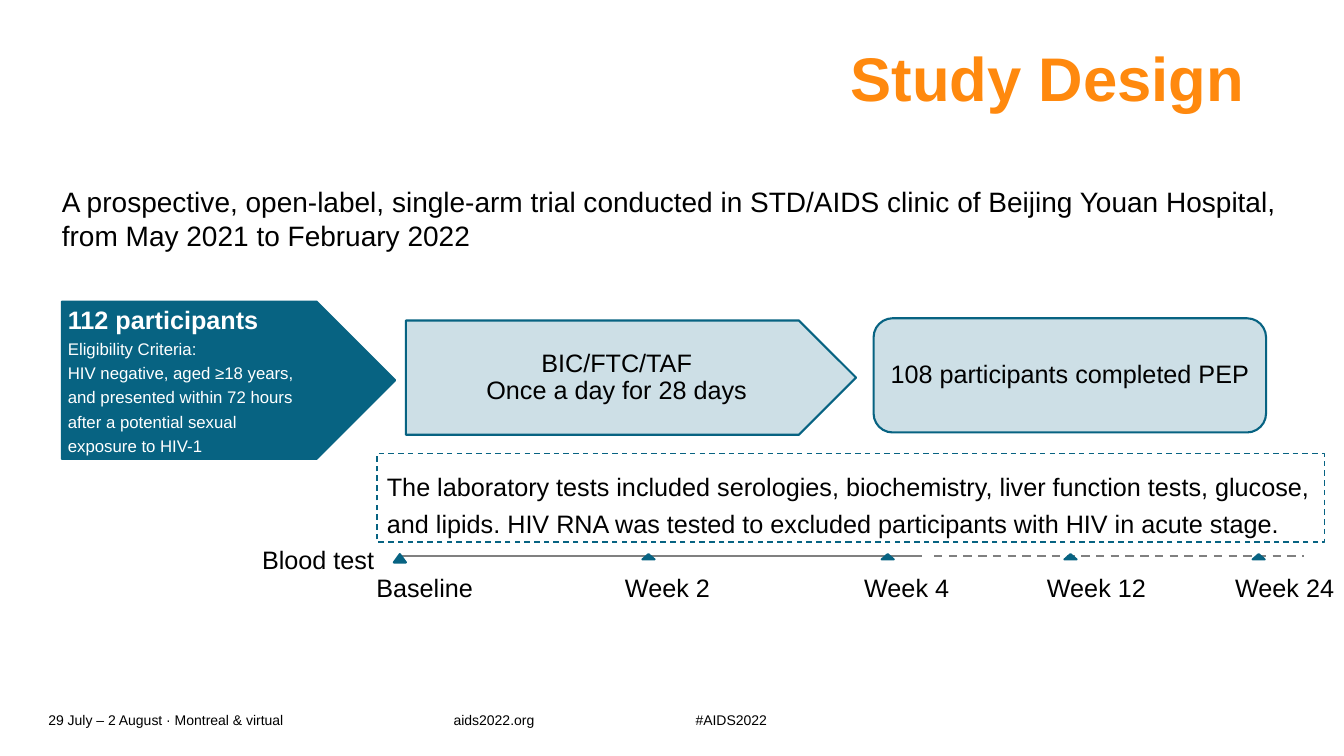
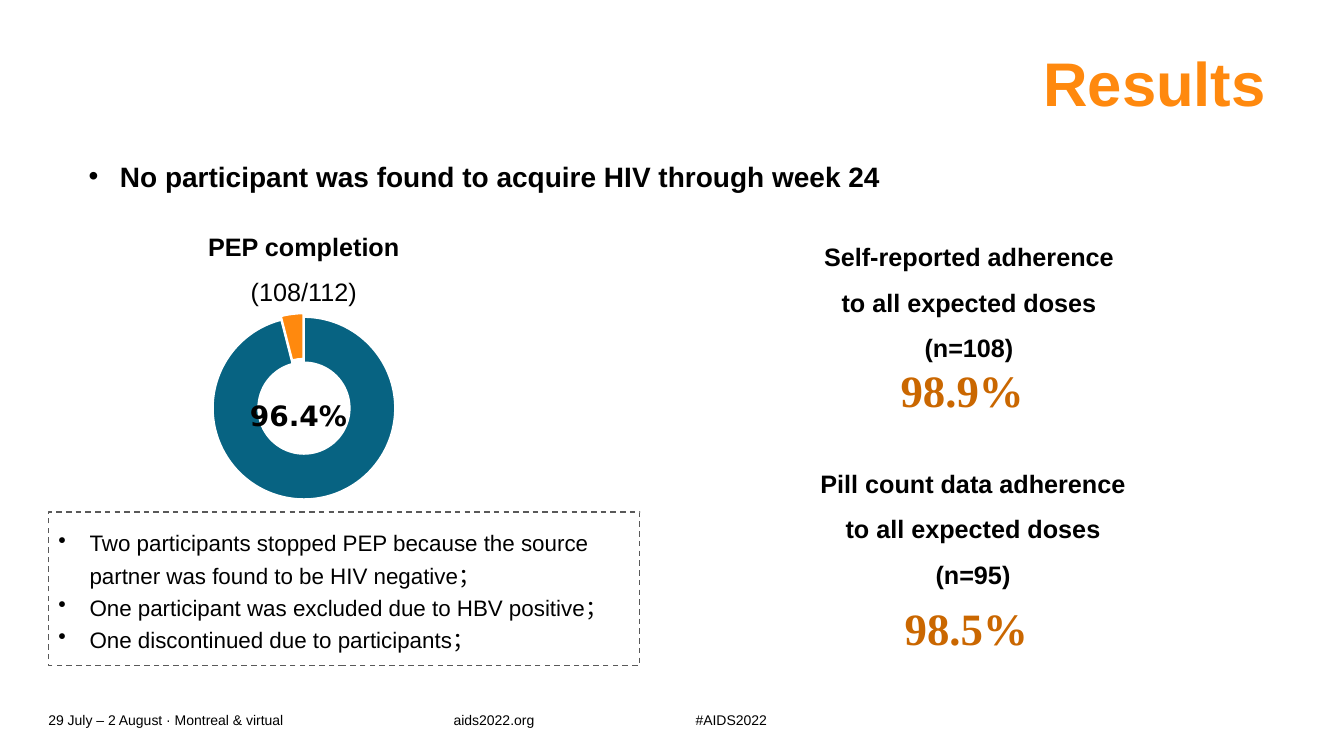
from dataclasses import dataclass, replace

from lxml.etree import SubElement
from pptx import Presentation
from pptx.chart.data import CategoryChartData
from pptx.dml.color import RGBColor
from pptx.enum.chart import XL_CHART_TYPE
from pptx.enum.dml import MSO_LINE
from pptx.enum.shapes import MSO_CONNECTOR, MSO_SHAPE
from pptx.enum.text import MSO_ANCHOR, MSO_AUTO_SIZE, PP_ALIGN
from pptx.oxml.ns import qn
from pptx.util import Inches, Pt

WIDE, HIGH = Inches(13.333), Inches(7.5)


@dataclass(frozen=True)
class Theme:
    teal: str = "076382"
    orange: str = "FF890E"
    amber: str = "CA6700"
    black: str = "000000"
    white: str = "FFFFFF"
    gray: str = "808080"
    dark: str = "595959"
    sans: str = "Arial"
    serif: str = "Times New Roman"
    plain: str = "DejaVu Sans"
    title: int = 44
    figure: int = 32
    lead: int = 20
    body: int = 18
    note: int = 16
    small: int = 12
    foot: int = 10


T = Theme()


@dataclass(frozen=True)
class Look:
    size: int = T.body
    color: str = T.black
    bold: bool = False
    font: str = T.sans
    align: PP_ALIGN = PP_ALIGN.LEFT
    lead: float = 1.0
    bullet: bool = False


TITLE = Look(T.title, T.orange, True, align=PP_ALIGN.RIGHT, lead=0.9)
LABEL = Look(lead=0.9)
STEP = replace(LABEL, align=PP_ALIGN.CENTER)
HEAD = Look(bold=True, align=PP_ALIGN.CENTER, lead=1.5)
RATE = Look(T.figure, T.amber, True, T.serif, PP_ALIGN.CENTER)
FOOT = Look(T.foot)
INSET = (0.1, 0.05, 0.1, 0.05)
FLUSH = (0, 0, 0, 0)


def area(x, y, w, h):
    """Turn percentages of the slide into a place and size."""
    return [int(whole * part / 100)
            for whole, part in zip((WIDE, HIGH) * 2, (x, y, w, h))]


def rgb(color):
    return RGBColor.from_string(color)


def mark(para, bullet):
    props = para._p.get_or_add_pPr()
    indent = Inches(0.31) if bullet else 0
    props.set("marL", str(indent))
    props.set("indent", str(-indent))
    if bullet:
        SubElement(props, qn("a:buChar")).set("char", "•")
    else:
        SubElement(props, qn("a:buNone"))


def write(frame, text, *looks, inset=INSET, anchor=MSO_ANCHOR.TOP, wrap=True):
    """Fill a frame, one look a line; the last look serves all later lines."""
    frame.text = text
    frame.word_wrap = wrap
    frame.auto_size = MSO_AUTO_SIZE.NONE
    frame.vertical_anchor = anchor
    (frame.margin_left, frame.margin_top,
     frame.margin_right, frame.margin_bottom) = map(Inches, inset)
    for spot, para in enumerate(frame.paragraphs):
        look = looks[min(spot, len(looks) - 1)]
        mark(para, look.bullet)
        para.alignment = look.align
        para.line_spacing = look.lead
        para.space_before = Pt(0)
        for run in para.runs:
            font = run.font
            font.name, font.size, font.bold = look.font, Pt(look.size), look.bold
            font.color.rgb = rgb(look.color)


def label(slide, place, text, *looks, **opts):
    write(slide.shapes.add_textbox(*area(*place)).text_frame, text, *looks, **opts)


def hold(holder, place, text, look, inset=INSET):
    """Move a placeholder and fill it."""
    holder.left, holder.top, holder.width, holder.height = area(*place)
    write(holder.text_frame, text, look, inset=inset)


def block(slide, kind, place, fill=None, edge=T.teal, width=1.5, dash=False, alpha=None):
    shape = slide.shapes.add_shape(kind, *area(*place))
    shape.shadow.inherit = False
    if fill:
        shape.fill.solid()
        shape.fill.fore_color.rgb = rgb(fill)
    else:
        shape.fill.background()
    if alpha:
        tint = shape._element.spPr.find(".//" + qn("a:srgbClr"))
        SubElement(tint, qn("a:alpha")).set("val", str(alpha * 1000))
    shape.line.color.rgb = rgb(edge)
    shape.line.width = Pt(width)
    if dash:
        shape.line.dash_style = MSO_LINE.DASH
    return shape.text_frame


def rule(slide, start, end, y, dash=False):
    x, top, span, _ = area(start, y, end - start, 0)
    line = slide.shapes.add_connector(MSO_CONNECTOR.STRAIGHT, x, top, x + span, top)
    line.line.color.rgb = rgb(T.gray)
    line.line.width = Pt(1.5)
    if dash:
        line.line.dash_style = MSO_LINE.DASH
    SubElement(line._element.spPr, qn("a:effectLst"))


def ring(slide, place, values, colors):
    data = CategoryChartData()
    data.categories = [str(n + 1) for n in range(len(values))]
    data.add_series("Series 1", values)
    chart = slide.shapes.add_chart(XL_CHART_TYPE.DOUGHNUT, *area(*place), data).chart
    chart.has_legend = chart.has_title = False
    chart.font.name, chart.font.size = T.plain, Pt(T.foot)
    chart.font.color.rgb = rgb(T.black)
    plot = chart.plots[0]
    plot.vary_by_categories = False
    series = plot.series[0]
    for spot, color in enumerate(colors):
        style = series.points[spot].format
        style.fill.solid()
        style.fill.fore_color.rgb = rgb(color)
        style.line.color.rgb = rgb(T.white)
        style.line.width = Pt(1.5)
    burst = SubElement(series._element, qn("c:explosion"))
    burst.set("val", "4")
    series._element.find(qn("c:dPt")).addprevious(burst)
    plot._element.find(qn("c:holeSize")).set("val", "75")


def page(deck, title, x, y):
    """Add a slide with its title and footer; return it with its body."""
    slide = deck.slides.add_slide(deck.slide_layouts[1])
    hold(slide.shapes.title, (x, y, 62.6, 17.9), title, TITLE, FLUSH)
    for left, width, text in ((3.6, 30.1, "29 July – 2 August · Montreal & virtual"),
                              (33.75, 14.5, "aids2022.org"),
                              (51.75, 14.5, "#AIDS2022")):
        label(slide, (left, 93.6, width, 3.2), text, FOOT,
              inset=FLUSH, anchor=MSO_ANCHOR.MIDDLE)
    return slide, slide.placeholders[1]


def visits(slide):
    rule(slide, 29.7, 68.6, 73.5)
    rule(slide, 69.5, 97, 73.5, dash=True)
    label(slide, (19.5, 72.4, 8.7, 3.6), "Blood test", LABEL, inset=FLUSH, wrap=False)
    for x, text in ((29.3, "Baseline"), (47.8, "Week 2"), (65.6, "Week 4"),
                    (79.2, "Week 12"), (93.2, "Week 24")):
        tall = 1.1 if text == "Baseline" else 0.7
        block(slide, MSO_SHAPE.ISOSCELES_TRIANGLE, (x, 73.3, 0.9, tall), T.teal)
        label(slide, (x - 1.3, 76.1, 8.1, 3.6), text, LABEL, inset=FLUSH, wrap=False)


def design(deck):
    slide, body = page(deck, "Study Design", 30, 6.4)
    hold(body, (4.6, 24.4, 90.6, 8.7),
         "A prospective, open-label, single-arm trial conducted in STD/AIDS clinic "
         "of Beijing Youan Hospital, from May 2021 to February 2022",
         Look(T.lead), FLUSH)

    entry = block(slide, MSO_SHAPE.PENTAGON, (4.6, 39.9, 24.8, 20.8), T.teal)
    write(entry, "112 participants\nEligibility Criteria:\n"
          "HIV negative, aged ≥18 years, and presented within 72 hours "
          "after a potential sexual exposure to HIV-1",
          Look(color=T.white, bold=True), Look(T.small, T.white, lead=1.2),
          inset=(0.06, 0.03, 0.47, 0))
    for kind, place, text in (
            (MSO_SHAPE.PENTAGON, (30.2, 42.4, 33.5, 15.1),
             "BIC/FTC/TAF\nOnce a day for 28 days"),
            (MSO_SHAPE.ROUNDED_RECTANGLE, (65, 42.1, 29.2, 15.1),
             "108 participants completed PEP")):
        write(block(slide, kind, place, T.teal, alpha=20), text, STEP,
              anchor=MSO_ANCHOR.MIDDLE)

    tests = block(slide, MSO_SHAPE.RECTANGLE, (28.05, 60, 70.5, 11.7), width=1, dash=True)
    write(tests, "The laboratory tests included serologies, biochemistry, liver function "
          "tests, glucose, and lipids. HIV RNA was tested to excluded participants "
          "with HIV in acute stage.", Look(lead=1.2), inset=(0.1, 0.12, 0, 0))
    visits(slide)


def results(deck):
    slide, body = page(deck, "Results", 31.6, 7.1)
    hold(body, (5.85, 19.5, 76.6, 6.3),
         "No participant was found to acquire HIV through week 24",
         Look(T.lead, bold=True, lead=1.2, bullet=True))

    ring(slide, (11.4, 39.6, 22.4, 28.3), (96, 4), (T.teal, T.orange))
    label(slide, (17.85, 52.1, 9.45, 5.9), "96.4%",
          Look(T.lead, bold=True, font=T.plain), wrap=False)
    label(slide, (6.1, 27.9, 33, 12.7), "PEP completion\n(108/112)",
          HEAD, replace(HEAD, bold=False))
    drops = block(slide, MSO_SHAPE.RECTANGLE, (3.6, 67.7, 44, 20.3),
                  edge=T.dark, width=1, dash=True)
    write(drops, "Two participants stopped PEP because the source partner was found "
          "to be HIV negative；\nOne participant was excluded due to HBV positive；\n"
          "One discontinued due to participants；",
          Look(T.note, lead=1.2, bullet=True), anchor=MSO_ANCHOR.MIDDLE)

    for x, y, drop, name, count, rate in (
            (55.6, 29.3, 18, "Self-reported adherence", 108, "98.9%"),
            (55.9, 59.3, 19.5, "Pill count data adherence", 95, "98.5%")):
        label(slide, (x, y, 33, 18.8),
              f"{name}\nto all expected doses\n(n={count})", HEAD)
        label(slide, (x + 5, y + drop, 22, 8.5), rate, RATE)


def main():
    deck = Presentation()
    deck.slide_width, deck.slide_height = WIDE, HIGH
    design(deck)
    results(deck)
    deck.save("out.pptx")


if __name__ == "__main__":
    main()
